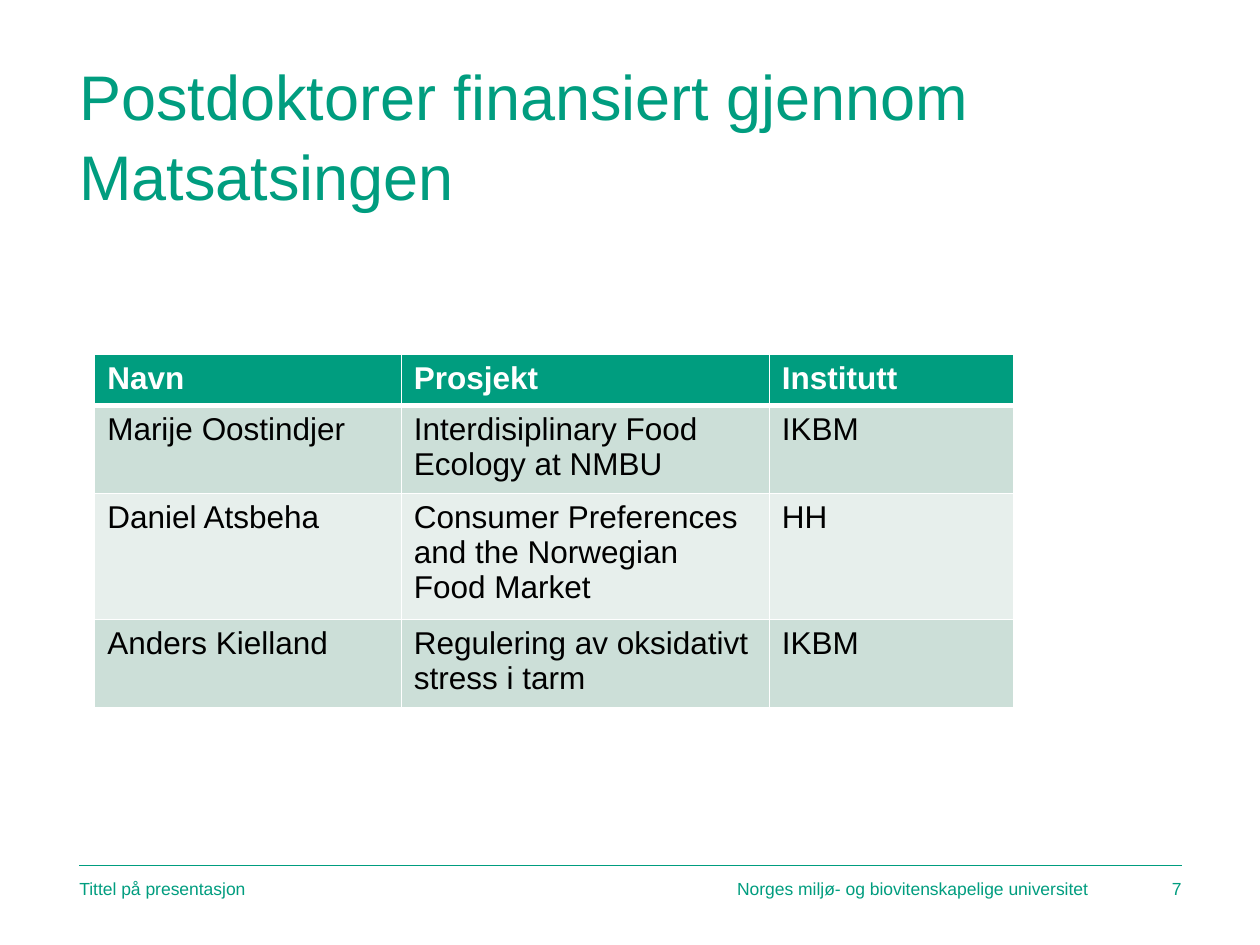
from dataclasses import dataclass

import pptx
import pptx.dml.color
import pptx.enum.shapes
import pptx.enum.text
import pptx.oxml
import pptx.oxml.ns
import pptx.util
from lxml import etree

Cm = pptx.util.Cm
Pt = pptx.util.Pt
Align = pptx.enum.text.PP_ALIGN
Anchor = pptx.enum.text.MSO_ANCHOR
color = pptx.dml.color.RGBColor.from_string


@dataclass(frozen=True)
class Theme:
    font: str = "Arial"
    green: str = "009D7F"
    white: str = "FFFFFF"
    black: str = "000000"
    bands: tuple = ("CCDFD8", "E7EFEC")
    title_size: int = 36
    table_size: int = 18
    footer_size: int = 10


theme = Theme()


def write_text(paragraph, text, size, text_color, bold=False):
    paragraph.text = text
    font_format = {"name": theme.font, "size": Pt(size), "bold": bold}
    for name, value in font_format.items():
        setattr(paragraph.font, name, value)
    paragraph.font.color.rgb = color(text_color)


def add_cell_borders(cell, bottom_width):
    """Draw white edges, with a bottom edge of its own width in points."""
    properties = cell._tc.get_or_add_tcPr()
    widths = {"lnL": 1, "lnR": 1, "lnT": 1, "lnB": bottom_width}
    for position, (edge, width) in enumerate(widths.items()):
        border = pptx.oxml.parse_xml(
            f'<a:{edge} {pptx.oxml.ns.nsdecls("a")} w="{Pt(width)}">'
            f'<a:solidFill><a:srgbClr val="{theme.white}"/></a:solidFill></a:{edge}>'
        )
        properties.insert(position, border)


presentation = pptx.Presentation()
presentation.slide_width = Cm(25.4)
presentation.slide_height = Cm(19.05)
slide = presentation.slides.add_slide(presentation.slide_layouts[6])

# Footer rule
margin_left, margin_right = 1.6, 23.82
rule = slide.shapes.add_connector(
    pptx.enum.shapes.MSO_CONNECTOR.STRAIGHT,
    Cm(margin_left), Cm(17.45), Cm(margin_right), Cm(17.45),
)
rule.line.color.rgb = color(theme.green)
rule.line.width = Pt(1)
etree.SubElement(rule._element.spPr, pptx.oxml.ns.qn("a:effectLst"))

# Title and footer texts: text, left, top, width, height, size, anchor, alignment, spacing
footer_top, footer_height = 17.7, 0.43
texts = [
    ("Postdoktorer finansiert gjennom Matsatsingen", margin_left, 1.22, 18.95, 3.07,
     theme.title_size, Anchor.BOTTOM, Align.LEFT, 1.05),
    ("Norges miljø- og biovitenskapelige universitet", 14.86, footer_top, 8.03, footer_height,
     theme.footer_size, Anchor.MIDDLE, Align.LEFT, 1.0),
    ("Tittel på presentasjon", margin_left, footer_top, 13.2, footer_height,
     theme.footer_size, Anchor.MIDDLE, Align.LEFT, 1.0),
    ("7", 22.97, footer_top, 0.85, footer_height,
     theme.footer_size, Anchor.MIDDLE, Align.RIGHT, 1.0),
]
for text, left, top, width, height, size, anchor, alignment, spacing in texts:
    box = slide.shapes.add_textbox(Cm(left), Cm(top), Cm(width), Cm(height))
    frame_format = {
        "word_wrap": True, "vertical_anchor": anchor,
        "margin_left": 0, "margin_right": 0, "margin_top": 0, "margin_bottom": 0,
    }
    for name, value in frame_format.items():
        setattr(box.text_frame, name, value)
    paragraph = box.text_frame.paragraphs[0]
    paragraph.alignment = alignment
    paragraph.line_spacing = spacing
    write_text(paragraph, text, size, theme.green)

# Table of postdoctoral fellows
rows = [
    ("Navn", "Prosjekt", "Institutt"),
    ("Marije Oostindjer", "Interdisiplinary Food Ecology at NMBU", "IKBM"),
    ("Daniel Atsbeha", "Consumer Preferences and the Norwegian Food Market", "HH"),
    ("Anders Kielland", "Regulering av oksidativt stress i tarm", "IKBM"),
]
column_widths = [6.18, 7.42, 4.93]
row_height = 1.03
table = slide.shapes.add_table(
    len(rows), len(column_widths),
    Cm(1.91), Cm(7.14), Cm(sum(column_widths)), Cm(row_height * len(rows)),
).table
for column, width in zip(table.columns, column_widths):
    column.width = Cm(width)

for row_index, row in enumerate(rows):
    is_header = row_index == 0
    fill_color = theme.green if is_header else theme.bands[(row_index - 1) % 2]
    text_color = theme.white if is_header else theme.black
    for column_index, text in enumerate(row):
        cell = table.cell(row_index, column_index)
        cell.fill.solid()
        cell.fill.fore_color.rgb = color(fill_color)
        write_text(cell.text_frame.paragraphs[0], text, theme.table_size, text_color, is_header)
        add_cell_borders(cell, 3 if is_header else 1)

presentation.save("out.pptx")
